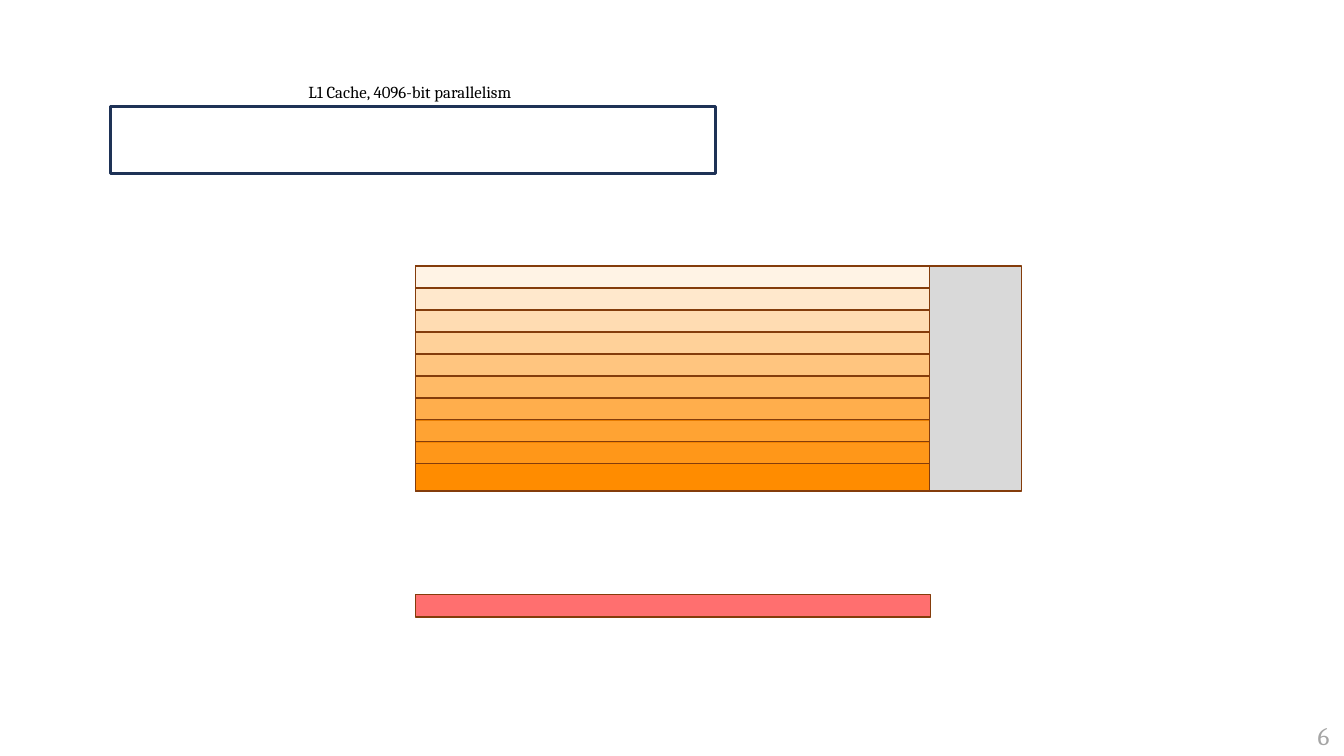
from dataclasses import dataclass

from lxml.etree import SubElement
from pptx import Presentation
from pptx.dml.color import RGBColor
from pptx.enum.shapes import MSO_SHAPE
from pptx.enum.text import MSO_AUTO_SIZE
from pptx.oxml.ns import qn
from pptx.slide import Slide
from pptx.util import Inches, Pt

FONT = "Cambria"
BROWN = "843C0B"
NAVY = "1E3256"
ORANGE = "FF8C00"
RED = "FF1414"
GRAY = "D9D9D9"

ARRAY_LEFT, ARRAY_TOP = 4.12, 2.64
ARRAY_WIDTH, ARRAY_HEIGHT = 5.11, 2.23
ROW_COUNT = 10
ROW_HEIGHT = 0.22
ROW_PITCH = 1.96 / (ROW_COUNT - 1)


@dataclass
class Box:
    left: float
    top: float
    width: float
    height: float
    fill: str | None = None
    opacity: int = 100
    line: str = BROWN
    line_width: float = 1


@dataclass
class Label:
    text: str
    left: float
    top: float
    width: float
    height: float
    size: int
    color: str


def rgb(color: str) -> RGBColor:
    return RGBColor.from_string(color)


def draw_box(slide: Slide, box: Box) -> None:
    shape = slide.shapes.add_shape(
        MSO_SHAPE.RECTANGLE,
        Inches(box.left), Inches(box.top), Inches(box.width), Inches(box.height),
    )
    shape.shadow.inherit = False
    shape.line.color.rgb = rgb(box.line)
    shape.line.width = Pt(box.line_width)
    if box.fill is None:
        shape.fill.background()
        return
    shape.fill.solid()
    shape.fill.fore_color.rgb = rgb(box.fill)
    if box.opacity < 100:
        color_element = shape.element.spPr.find(qn("a:solidFill")).find(qn("a:srgbClr"))
        SubElement(color_element, qn("a:alpha"), val=str(box.opacity * 1000))


def draw_label(slide: Slide, label: Label) -> None:
    shape = slide.shapes.add_textbox(
        Inches(label.left), Inches(label.top), Inches(label.width), Inches(label.height)
    )
    frame = shape.text_frame
    frame.word_wrap = True
    frame.auto_size = MSO_AUTO_SIZE.SHAPE_TO_FIT_TEXT
    run = frame.paragraphs[0].add_run()
    run.text = label.text
    run.font.name = FONT
    run.font.size = Pt(label.size)
    run.font.color.rgb = rgb(label.color)


def array_rows() -> list[Box]:
    """Rows grow more opaque downwards; the last one reaches the array's bottom."""
    rows = []
    for index in range(ROW_COUNT):
        offset = index * ROW_PITCH
        is_last = index == ROW_COUNT - 1
        height = ARRAY_HEIGHT - offset if is_last else ROW_HEIGHT
        opacity = (index + 1) * 100 // ROW_COUNT
        rows.append(
            Box(ARRAY_LEFT, ARRAY_TOP + offset, ARRAY_WIDTH, height, ORANGE, opacity)
        )
    return rows


def main() -> None:
    presentation = Presentation()
    presentation.slide_width = Inches(13.33)
    presentation.slide_height = Inches(7.5)
    slide = presentation.slides.add_slide(presentation.slide_layouts[6])

    array_outline = Box(ARRAY_LEFT, ARRAY_TOP, ARRAY_WIDTH, ARRAY_HEIGHT)
    result_row = Box(ARRAY_LEFT, 5.9, ARRAY_WIDTH, ROW_HEIGHT, RED, 61)
    side_block = Box(9.22, ARRAY_TOP, 0.91, ARRAY_HEIGHT, GRAY)
    cache = Box(1.1, 1.06, 6, 0.66, line=NAVY, line_width=2.25)
    for box in [array_outline, *array_rows(), result_row, side_block, cache]:
        draw_box(slide, box)

    labels = [
        Label("L1 Cache, 4096-bit parallelism", 2.96, 0.76, 2.72, 0.3, 12, "000000"),
        Label("6", 12.97, 7.1, 0.36, 0.4, 18, "A5A5A5"),
    ]
    for label in labels:
        draw_label(slide, label)

    presentation.save("out.pptx")


if __name__ == "__main__":
    main()
